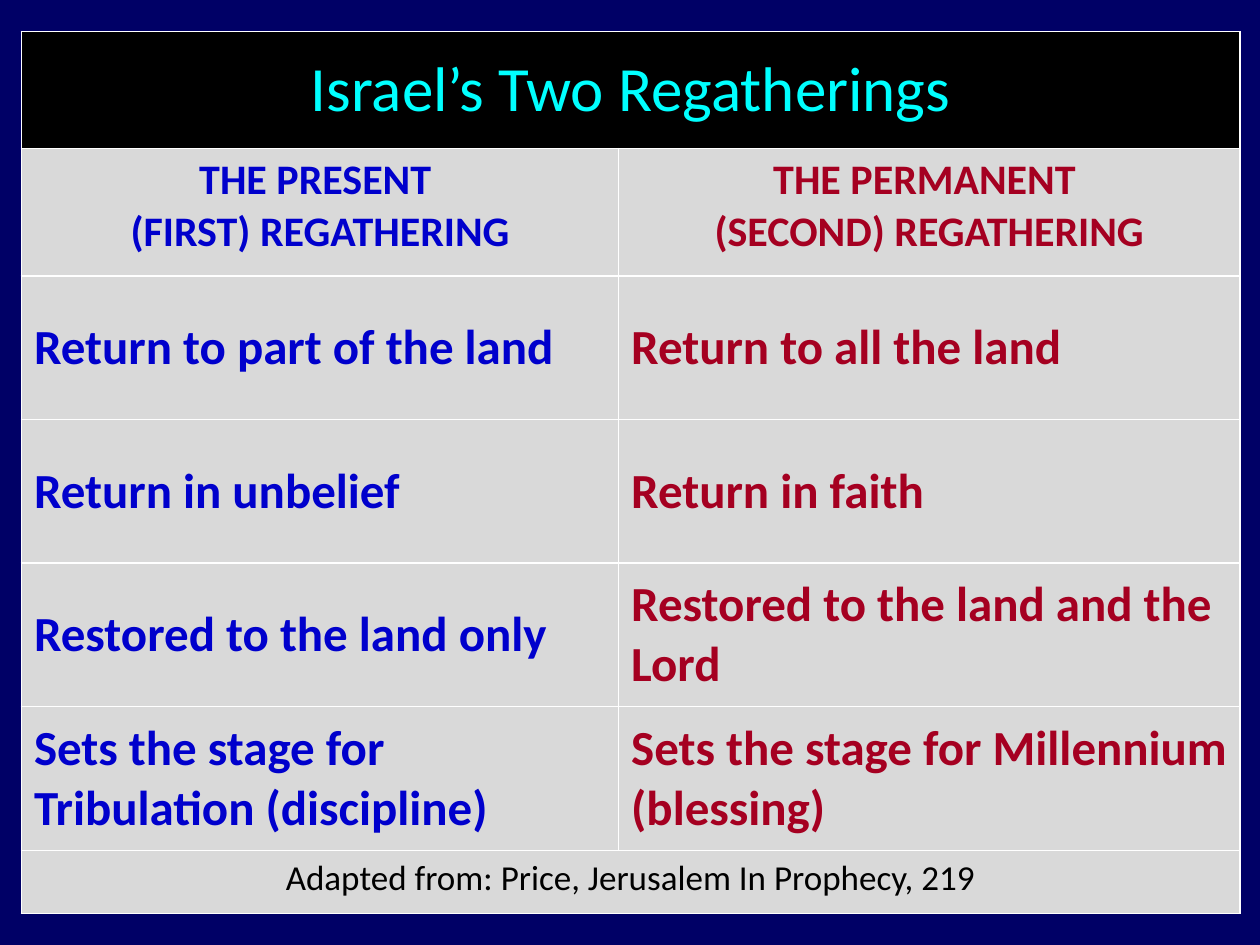
from lxml.etree import SubElement
from pptx import Presentation
from pptx.dml.color import RGBColor
from pptx.enum.text import MSO_ANCHOR, PP_ALIGN
from pptx.oxml.ns import qn
from pptx.util import Inches, Pt

NAVY = RGBColor(0x00, 0x00, 0x66)
BLACK = RGBColor(0x00, 0x00, 0x00)
CYAN = RGBColor(0x00, 0xFF, 0xFF)
GREY = RGBColor(0xD9, 0xD9, 0xD9)
BLUE = RGBColor(0x00, 0x00, 0xCC)
CRIMSON = RGBColor(0xA5, 0x00, 0x21)
WHITE = RGBColor(0xFF, 0xFF, 0xFF)

TITLE = "Israel’s Two Regatherings"
HEADINGS = ("THE PRESENT \n(FIRST) REGATHERING",
            "THE PERMANENT \n(SECOND) REGATHERING")
COMPARISONS = (
    ("Return to part of the land", "Return to all the land"),
    ("Return in unbelief", "Return in faith"),
    ("Restored to the land only", "Restored to the land and the Lord"),
    ("Sets the stage for Tribulation (discipline)",
     "Sets the stage for Millennium (blessing)"),
)
SOURCE = "Adapted from: Price, Jerusalem In Prophecy, 219"
COLUMN_COLOURS = (BLUE, CRIMSON)
COLUMN_WIDTHS = (4.74, 4.93)
ROW_HEIGHTS = (0.93, 1.01, *[1.14] * len(COMPARISONS), 0.5)


def write_text(frame, text, *, font, size, colour, bold=False,
               align=PP_ALIGN.LEFT, spacing=0):
    """Fill a text frame, one paragraph for each line of text."""
    frame.text = text
    for para in frame.paragraphs:
        para.alignment = align
        para.space_before = para.space_after = Pt(spacing)
        for span in para.runs:
            span.font.name = font
            span.font.size = Pt(size)
            span.font.bold = bold
            span.font.color.rgb = colour


class PageBuilder:
    def __init__(self, page, font="Calibri", border=WHITE, border_width=1):
        self.page = page
        self.font = font
        self.border = border
        self.border_width = border_width

    def background(self, colour):
        fill = self.page.background.fill
        fill.solid()
        fill.fore_color.rgb = colour

    def table(self, left, top, widths, heights):
        frame = self.page.shapes.add_table(
            len(heights), len(widths), Inches(left), Inches(top),
            Inches(sum(widths)), Inches(sum(heights)))
        table = frame.table
        table.first_row = table.horz_banding = False
        for column, width in zip(table.columns, widths):
            column.width = Inches(width)
        for row, height in zip(table.rows, heights):
            row.height = Inches(height)
        for cell in table.iter_cells():
            self.borders(cell)
        return table

    def borders(self, cell):
        properties = cell._tc.get_or_add_tcPr()
        for side in ("a:lnL", "a:lnR", "a:lnT", "a:lnB"):
            line = SubElement(properties, qn(side), w=str(Pt(self.border_width)))
            fill = SubElement(line, qn("a:solidFill"))
            SubElement(fill, qn("a:srgbClr"), val=str(self.border))

    def cell(self, cell, text, fill=GREY, anchor=MSO_ANCHOR.TOP, **text_format):
        cell.fill.solid()
        cell.fill.fore_color.rgb = fill
        cell.vertical_anchor = anchor
        write_text(cell.text_frame, text, font=self.font, **text_format)

    def full_row(self, table, row, text, **cell_format):
        first = table.cell(row, 0)
        first.merge(table.cell(row, len(table.columns) - 1))
        self.cell(first, text, align=PP_ALIGN.CENTER, **cell_format)

    def split_row(self, table, row, texts, **cell_format):
        for column, (text, colour) in enumerate(zip(texts, COLUMN_COLOURS)):
            self.cell(table.cell(row, column), text, colour=colour, bold=True,
                      **cell_format)


def main():
    deck = Presentation()
    deck.slide_width, deck.slide_height = Inches(10), Inches(7.5)
    builder = PageBuilder(deck.slides.add_slide(deck.slide_layouts[6]))
    builder.background(NAVY)

    table = builder.table(0.17, 0.25, COLUMN_WIDTHS, ROW_HEIGHTS)
    builder.full_row(table, 0, TITLE, fill=BLACK, anchor=MSO_ANCHOR.MIDDLE,
                     size=36, colour=CYAN)
    builder.split_row(table, 1, HEADINGS, size=24, align=PP_ALIGN.CENTER)
    for row, texts in enumerate(COMPARISONS, start=2):
        builder.split_row(table, row, texts, size=28, spacing=24,
                          anchor=MSO_ANCHOR.MIDDLE)
    builder.full_row(table, len(ROW_HEIGHTS) - 1, SOURCE, size=20, colour=BLACK)

    deck.save("out.pptx")


if __name__ == "__main__":
    main()
